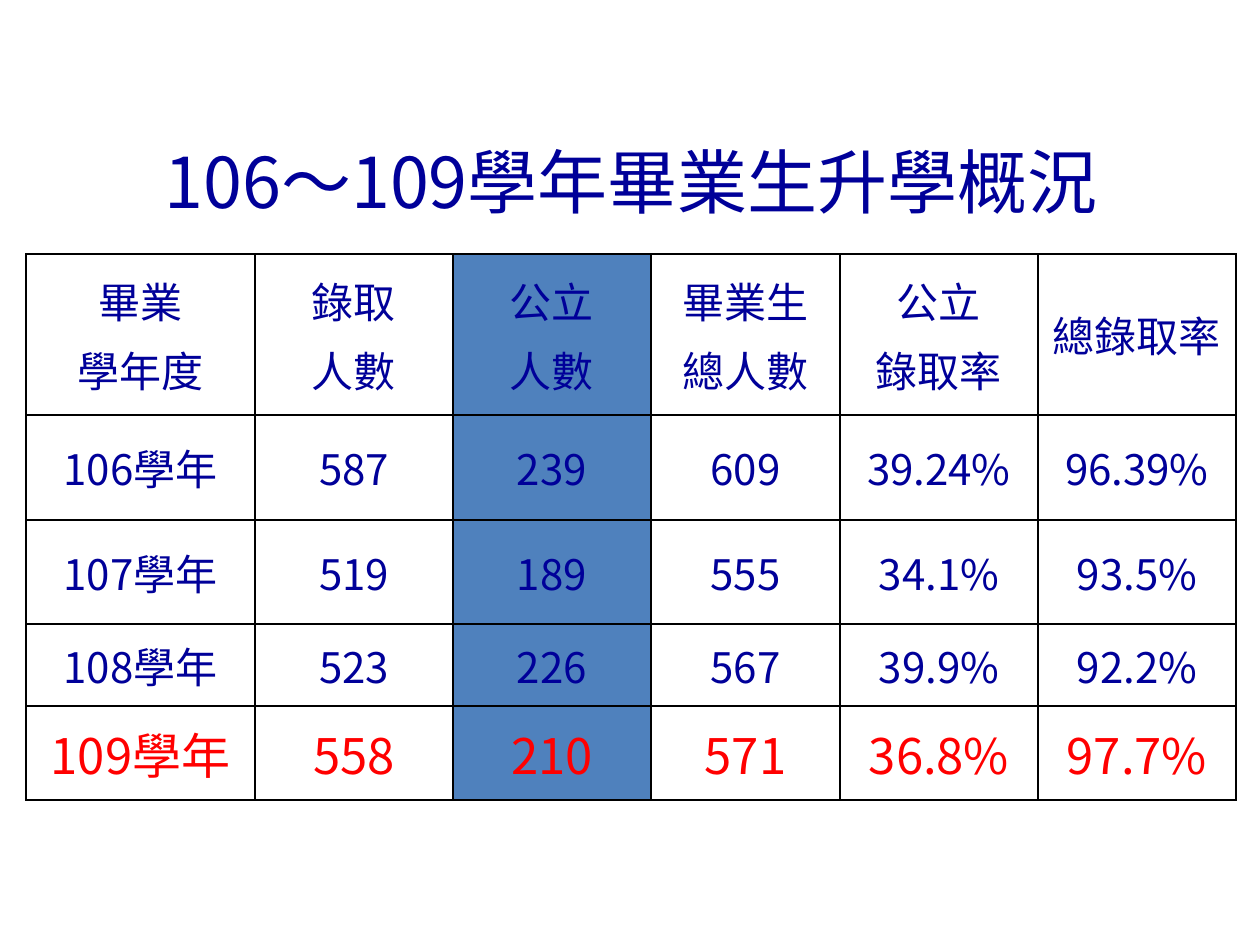
"""Build a slide with a table of graduate admissions for years 106 to 109."""
from lxml import etree
from pptx import Presentation
from pptx.dml.color import RGBColor
from pptx.enum.text import MSO_ANCHOR, MSO_AUTO_SIZE, PP_ALIGN
from pptx.oxml.ns import qn
from pptx.util import Pt

MIDDLE = MSO_ANCHOR.MIDDLE
CENTER = PP_ALIGN.CENTER
FIXED = MSO_AUTO_SIZE.NONE

TITLE = "106～109學年畢業生升學概況"
ROWS = [
    ["畢業\n學年度", "錄取\n人數", "公立\n人數", "畢業生\n總人數", "公立\n錄取率", "總錄取率"],
    ["106學年", "587", "239", "609", "39.24%", "96.39%"],
    ["107學年", "519", "189", "555", "34.1%", "93.5%"],
    ["108學年", "523", "226", "567", "39.9%", "92.2%"],
    ["109學年", "558", "210", "571", "36.8%", "97.7%"],
]
WIDTHS = [229, 198, 198, 189, 198, 198]
HEIGHTS = [161, 105, 104, 82, 94]
PUBLIC = 2
LATEST = len(ROWS) - 1
FONT = "Noto Sans CJK SC"
COLORS = {"text": "000099", "latest": "FF0000", "public": "4F81BD", "border": "000000"}


def px(count):
    return round(count * 914400 / 126)


def style(frame, size, color):
    frame.word_wrap = True
    for para in frame.paragraphs:
        para.alignment = CENTER
        for run in para.runs:
            run.font.size = Pt(size)
            run.font.name = FONT
            run.font.color.rgb = RGBColor.from_string(COLORS[color])
            east = etree.SubElement(run.font._element, qn("a:ea"))
            east.set("typeface", FONT)


def add_borders(cell):
    props = cell._tc.get_or_add_tcPr()
    for index, side in enumerate(("lnL", "lnR", "lnT", "lnB")):
        line = etree.Element(qn(f"a:{side}"), w=str(Pt(1)))
        fill = etree.SubElement(line, qn("a:solidFill"))
        etree.SubElement(fill, qn("a:srgbClr"), val=COLORS["border"])
        props.insert(index, line)


def add_title(slide):
    title = slide.shapes.title
    title.left, title.top, title.width, title.height = map(px, (64, 102, 1134, 158))
    frame = title.text_frame
    frame.text = TITLE
    frame.auto_size = FIXED
    frame.vertical_anchor = MIDDLE
    style(frame, 40, "text")


def fill_cell(cell, text, row, col):
    cell.text_frame.text = text
    cell.vertical_anchor = MIDDLE
    if row == LATEST:
        style(cell.text_frame, 28, "latest")
    else:
        style(cell.text_frame, 24, "text")
    for para in cell.text_frame.paragraphs[1:]:
        para.space_before = Pt(4.8)
    if col == PUBLIC:
        cell.fill.solid()
        cell.fill.fore_color.rgb = RGBColor.from_string(COLORS["public"])
    else:
        cell.fill.background()
    add_borders(cell)


def add_grid(slide):
    box = map(px, (26, 254, sum(WIDTHS), sum(HEIGHTS)))
    table = slide.shapes.add_table(len(ROWS), len(WIDTHS), *box).table
    table.first_row = table.horz_banding = False
    for column, width in zip(table.columns, WIDTHS):
        column.width = px(width)
    for line, height in zip(table.rows, HEIGHTS):
        line.height = px(height)
    for row, texts in enumerate(ROWS):
        for col, text in enumerate(texts):
            fill_cell(table.cell(row, col), text, row, col)


def main():
    deck = Presentation()
    deck.slide_width, deck.slide_height = px(1260), px(945)
    slide = deck.slides.add_slide(deck.slide_layouts[5])
    add_title(slide)
    add_grid(slide)
    deck.save("out.pptx")


if __name__ == "__main__":
    main()
